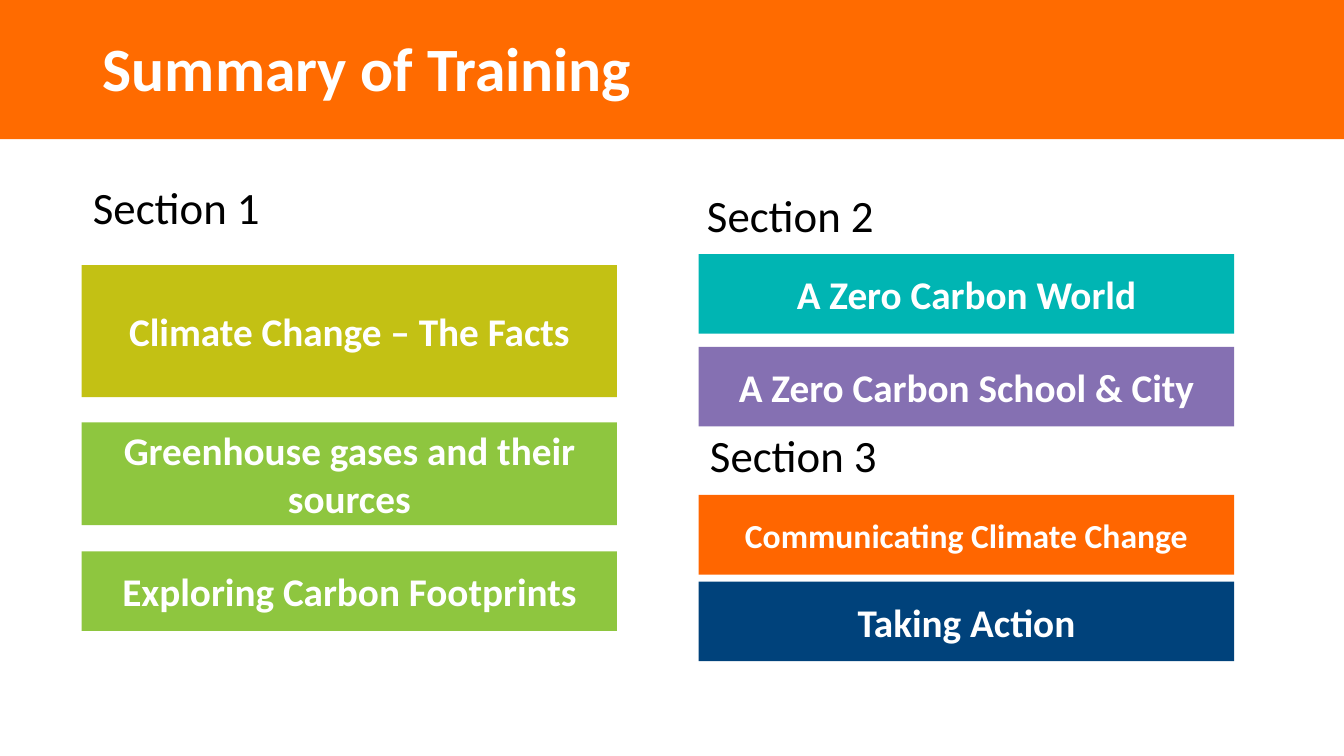
from pptx import Presentation
from pptx.dml.color import RGBColor
from pptx.enum import shapes, text
from pptx.util import Inches, Pt

FONT = "Calibri"
COLORS = {
    "banner": "FF6B00", "white": "FFFFFF", "black": "000000",
    "olive": "C3C114", "green": "8EC63F", "teal": "00B5B3",
    "purple": "8570B2", "orange": "FF6600", "navy": "00427B",
}
TITLE = "Summary of Training"
LEFT_COL, RIGHT_COL = 0.81, 6.93
TOPIC_W, TOPIC_H = 5.31, 0.79

# heading, left, top
HEADINGS = [
    ("Section 1", LEFT_COL, 1.73),
    ("Section 2", 6.9, 1.81),
    ("Section 3", RIGHT_COL, 4.19),
]
# topic, colour, left, top, height, text size
TOPICS = [
    ("Climate Change – The Facts", "olive", LEFT_COL, 2.63, 1.31, 28),
    ("Greenhouse gases and their sources", "green", LEFT_COL, 4.19, 1.02, 28),
    ("Exploring Carbon Footprints", "green", LEFT_COL, 5.47, TOPIC_H, 28),
    ("A Zero Carbon World", "teal", RIGHT_COL, 2.52, TOPIC_H, 28),
    ("A Zero Carbon School & City", "purple", RIGHT_COL, 3.44, TOPIC_H, 28),
    ("Communicating Climate Change", "orange", RIGHT_COL, 4.91, TOPIC_H, 24),
    ("Taking Action", "navy", RIGHT_COL, 5.77, TOPIC_H, 28),
]


def rgb(name):
    return RGBColor.from_string(COLORS[name])


def write(sp, words, size, color, bold, align):
    tf = sp.text_frame
    tf.text = words
    tf.vertical_anchor = text.MSO_ANCHOR.MIDDLE
    p = tf.paragraphs[0]
    p.alignment = align
    font = p.runs[0].font
    font.name, font.size, font.bold = FONT, Pt(size), bold
    font.color.rgb = rgb(color)
    return tf


def add_block(slide, left, top, width, height, color):
    sp = slide.shapes.add_shape(
        shapes.MSO_SHAPE.RECTANGLE,
        Inches(left), Inches(top), Inches(width), Inches(height))
    sp.shadow.inherit = False
    sp.fill.solid()
    sp.fill.fore_color.rgb = rgb(color)
    sp.line.fill.background()
    return sp


def main():
    prs = Presentation()
    prs.slide_width, prs.slide_height = Inches(13.33), Inches(7.5)
    slide = prs.slides.add_slide(prs.slide_layouts[5])

    banner = add_block(slide, 0, 0, 13.33, 1.38, "banner")
    title = slide.shapes.title
    title._element.addprevious(banner._element)  # banner goes behind the title
    title.left, title.top = Inches(0.92), Inches(0.22)
    title.width, title.height = Inches(11.5), Inches(0.97)
    tf = write(title, TITLE, 44, "white", True, text.PP_ALIGN.LEFT)
    tf.auto_size = text.MSO_AUTO_SIZE.NONE
    tf.paragraphs[0].line_spacing = 0.9

    for topic, color, left, top, height, size in TOPICS:
        sp = add_block(slide, left, top, TOPIC_W, height, color)
        tf = write(sp, topic, size, "white", True, text.PP_ALIGN.CENTER)
        tf.word_wrap = True

    for heading, left, top in HEADINGS:
        sp = slide.shapes.add_textbox(
            Inches(left), Inches(top), Inches(1.88), Inches(0.64))
        tf = write(sp, heading, 32, "black", False, text.PP_ALIGN.CENTER)
        tf.vertical_anchor = text.MSO_ANCHOR.TOP
        tf.word_wrap = False
        tf.auto_size = text.MSO_AUTO_SIZE.SHAPE_TO_FIT_TEXT

    prs.save("out.pptx")


if __name__ == "__main__":
    main()
